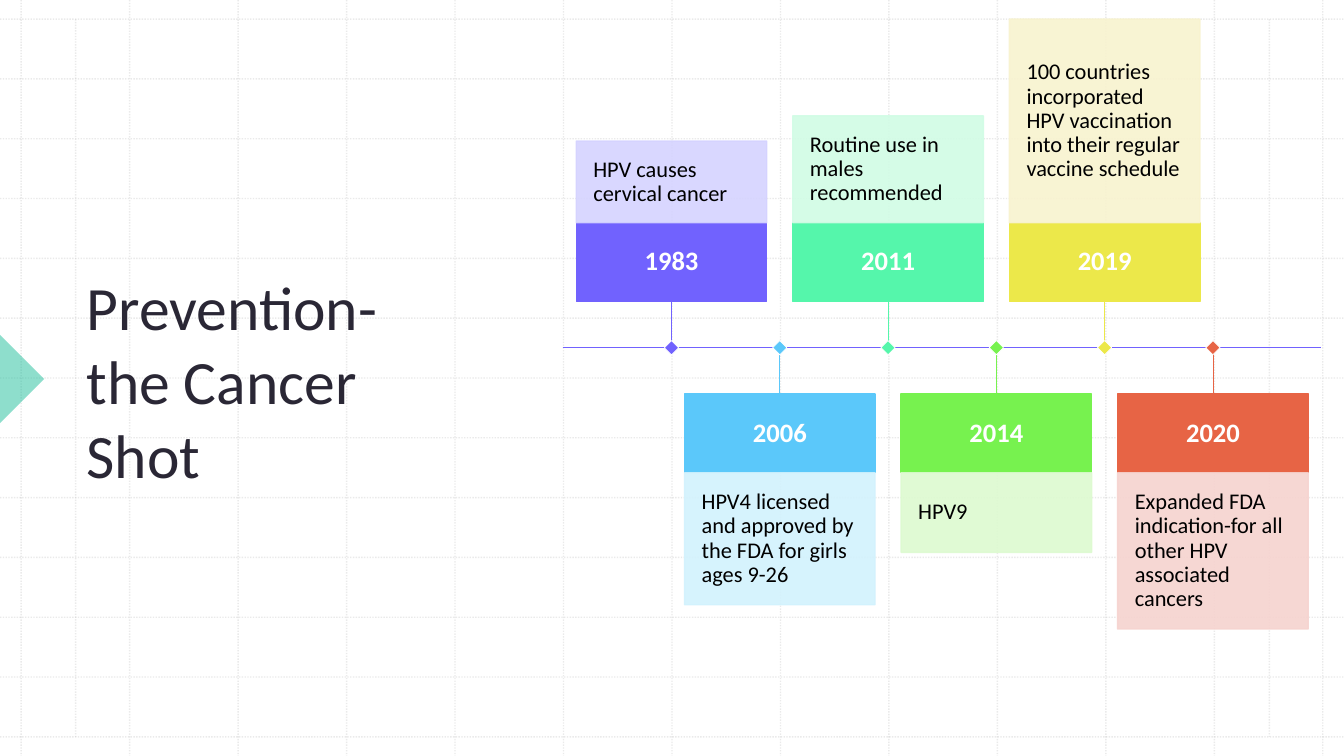
from pptx import Presentation
from pptx.dml.color import RGBColor
from pptx.enum.dml import MSO_LINE
from pptx.enum.shapes import MSO_CONNECTOR, MSO_SHAPE
from pptx.enum.text import MSO_ANCHOR, PP_ALIGN
from pptx.oxml.ns import qn
from pptx.util import Inches, Pt
from lxml.etree import SubElement

SLIDE_WIDTH, SLIDE_HEIGHT = 13.33, 7.5
GRID_LEFT, GRID_RIGHT = 0.21, 13.12
GRID_TOP, GRID_BOTTOM = 0.19, 7.31
GRID_STEPS = 12
GRID_COLOR = "BCBCBC"

AXIS_Y = 3.45
FIRST_CENTER, LAST_CENTER = 6.66, 12.03
CARD_WIDTH, YEAR_HEIGHT = 1.89, 0.78
UPPER_YEAR_TOP, LOWER_YEAR_TOP = 2.21, 3.91
MARKER_SIZE = 0.1

# year, description, description height, strong colour, pale colour
EVENTS = [
    ("1983", "HPV causes cervical cancer", 0.81, "7162FE", "D5D3FF"),
    ("2006", "HPV4 licensed and approved by the FDA for girls ages 9-26",
     1.31, "5BC8FA", "D2F2FD"),
    ("2011", "Routine use in males recommended", 1.06, "55F6AB", "D1FCE5"),
    ("2014", "HPV9", 0.79, "77F24F", "DDFAD0"),
    ("2019", "100 countries incorporated HPV vaccination into their regular "
     "vaccine schedule", 2.02, "ECE84A", "F8F3CF"),
    ("2020", "Expanded FDA indication-for all other HPV associated cancers",
     1.55, "E76445", "F6D3CF"),
]


def set_color(color_format, hex_color, opacity=100):
    """Apply a solid colour to a fill; opacity is a percentage."""
    color_format.solid()
    color_format.fore_color.rgb = RGBColor.from_string(hex_color)
    if opacity < 100:
        color = color_format.fore_color._xFill[0]
        SubElement(color, qn("a:alpha"), val=str(opacity * 1000))


def add_line(slide, start, end, color, width=1.0, opacity=100, dash=None):
    points = [Inches(value) for value in (*start, *end)]
    connector = slide.shapes.add_connector(MSO_CONNECTOR.STRAIGHT, *points)
    set_color(connector.line.fill, color, opacity)
    connector.line.width = Pt(width)
    if dash:
        connector.line.dash_style = dash
    SubElement(connector._element.spPr, qn("a:effectLst"))


def add_block(slide, kind, left, top, width, height, color,
              opacity=100, border=None, border_width=1.0, rotation=0):
    shape = slide.shapes.add_shape(
        kind, Inches(left), Inches(top), Inches(width), Inches(height))
    shape.shadow.inherit = False
    shape.rotation = rotation
    set_color(shape.fill, color, opacity)
    if border:
        set_color(shape.line.fill, border, opacity)
        shape.line.width = Pt(border_width)
    else:
        shape.line.fill.background()
    return shape


def write_text(shape, text, size=16, color="000000", bold=False,
               align=PP_ALIGN.LEFT, margins=(0.1, 0.05), line_spacing=1.0):
    """Fill a shape with one paragraph; margins are horizontal, vertical."""
    frame = shape.text_frame
    frame.word_wrap = True
    frame.vertical_anchor = MSO_ANCHOR.MIDDLE
    frame.margin_left = frame.margin_right = Inches(margins[0])
    frame.margin_top = frame.margin_bottom = Inches(margins[1])
    paragraph = frame.paragraphs[0]
    paragraph.alignment = align
    paragraph.line_spacing = line_spacing
    run = paragraph.add_run()
    run.text = text
    run.font.name = "Calibri"
    run.font.size = Pt(size)
    run.font.bold = bold
    set_color(run.font.fill, color)


def add_grid(slide):
    column_step = (GRID_RIGHT - GRID_LEFT) / GRID_STEPS
    row_step = (GRID_BOTTOM - GRID_TOP) / GRID_STEPS
    lines = []
    for index in range(GRID_STEPS + 1):
        x = GRID_LEFT + index * column_step
        y = GRID_TOP + index * row_step
        lines.append(((x, 0), (x, SLIDE_HEIGHT)))
        lines.append(((0, y), (SLIDE_WIDTH, y)))
    for x in (0.75, 12.59):
        lines.append(((x, GRID_TOP), (x, GRID_BOTTOM)))
    for start, end in lines:
        add_line(slide, start, end, GRID_COLOR, opacity=30,
                 dash=MSO_LINE.ROUND_DOT)


def add_title(slide, text):
    add_block(slide, MSO_SHAPE.RIGHT_TRIANGLE, -0.31, 3.45, 0.62, 0.62,
              "1EBE9B", opacity=50, rotation=225)
    title = slide.shapes.add_textbox(
        Inches(0.76), Inches(0.79), Inches(3.75), Inches(5.95))
    write_text(title, text, size=44, color="2A2735")


def add_event(slide, center, is_upper, event):
    """Draw a dated card above or below the axis, with stem and marker."""
    year, description, height, strong, pale = event
    left = center - CARD_WIDTH / 2
    if is_upper:
        year_top = UPPER_YEAR_TOP
        description_top = year_top - height
        stem_end = year_top + YEAR_HEIGHT
    else:
        year_top = stem_end = LOWER_YEAR_TOP
        description_top = year_top + YEAR_HEIGHT

    year_box = add_block(slide, MSO_SHAPE.RECTANGLE, left, year_top,
                         CARD_WIDTH, YEAR_HEIGHT, strong, border=strong)
    write_text(year_box, year, size=19, color="FFFFFF", bold=True,
               align=PP_ALIGN.CENTER, margins=(0.11, 0.11), line_spacing=0.9)
    description_box = add_block(slide, MSO_SHAPE.RECTANGLE, left,
                                description_top, CARD_WIDTH, height, pale,
                                opacity=90, border=pale)
    write_text(description_box, description, margins=(0.17, 0.17),
               line_spacing=0.9)
    add_line(slide, (center, stem_end), (center, AXIS_Y), strong, width=0.5)
    add_block(slide, MSO_SHAPE.RECTANGLE, center - MARKER_SIZE / 2,
              AXIS_Y - MARKER_SIZE / 2, MARKER_SIZE, MARKER_SIZE, strong,
              border="FFFFFF", border_width=0.5, rotation=45)


def add_timeline(slide):
    add_line(slide, (5.58, AXIS_Y), (13.1, AXIS_Y), "7162FE")
    step = (LAST_CENTER - FIRST_CENTER) / (len(EVENTS) - 1)
    for index, event in enumerate(EVENTS):
        add_event(slide, FIRST_CENTER + index * step, index % 2 == 0, event)


def main():
    presentation = Presentation()
    presentation.slide_width = Inches(SLIDE_WIDTH)
    presentation.slide_height = Inches(SLIDE_HEIGHT)
    slide = presentation.slides.add_slide(presentation.slide_layouts[6])
    set_color(slide.background.fill, "FFFFFF")
    add_grid(slide)
    add_title(slide, "Prevention-the Cancer Shot")
    add_timeline(slide)
    presentation.save("out.pptx")


if __name__ == "__main__":
    main()
